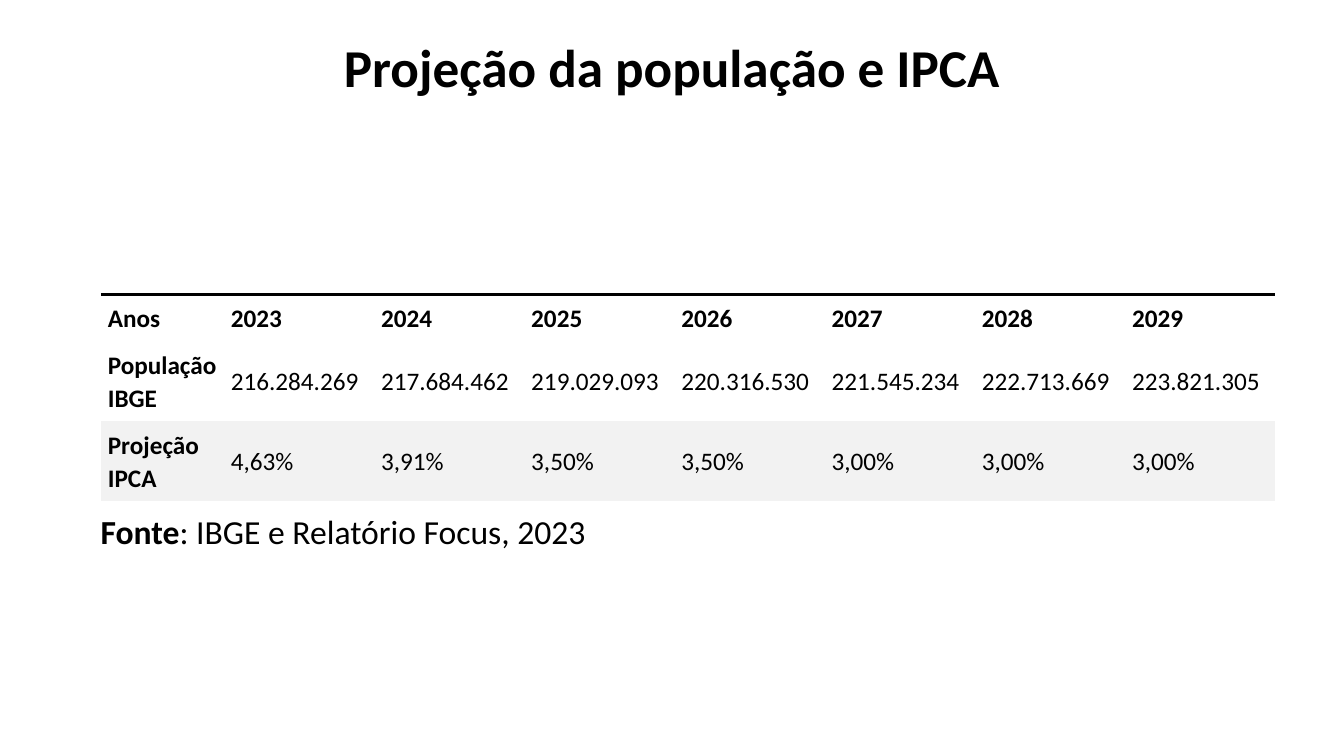
from pptx import Presentation
from pptx.dml.color import RGBColor
from pptx.enum.text import MSO_ANCHOR as Anchor, MSO_AUTO_SIZE as AutoSize, PP_ALIGN as Align
from pptx.oxml import parse_xml
from pptx.oxml.ns import nsdecls, qn
from pptx.util import Inches, Pt

BLACK = RGBColor(0, 0, 0)
BAND = RGBColor(0xF2, 0xF2, 0xF2)
FONT = "Calibri"
PLAIN_STYLE = "{2D5ABB26-0587-4C30-8999-92F81FD0307C}"
SLIDE_W, SLIDE_H = 13.33, 7.5

PROJECTIONS = [
    ["Anos", *(str(year) for year in range(2023, 2030))],
    ["População IBGE", "216.284.269", "217.684.462", "219.029.093", "220.316.530",
     "221.545.234", "222.713.669", "223.821.305"],
    ["Projeção IPCA", "4,63%", "3,91%", "3,50%", "3,50%", "3,00%", "3,00%", "3,00%"],
]
LABEL_W, YEAR_W = 1.22, 1.49
ROW_HEIGHTS = [0.4, 0.64, 0.64]


def write(paragraph, text, size=18, bold=False, align=Align.LEFT, spacing=1, after=0):
    """Add a formatted run to a paragraph."""
    paragraph.alignment = align
    paragraph.line_spacing = spacing
    paragraph.space_before, paragraph.space_after = Pt(0), Pt(after)
    run = paragraph.add_run()
    run.text = text
    run.font.name, run.font.size, run.font.bold = FONT, Pt(size), bold
    run.font.color.rgb = BLACK


def add_heading(slide, left, top, width, height):
    """Place the slide title in the given box."""
    heading = slide.shapes.title
    heading.left, heading.top = Inches(left), Inches(top)
    heading.width, heading.height = Inches(width), Inches(height)
    frame = heading.text_frame
    frame.word_wrap, frame.auto_size = True, AutoSize.NONE
    frame.vertical_anchor = Anchor.MIDDLE
    write(frame.paragraphs[0], "Projeção da população e IPCA", size=38, bold=True,
          align=Align.CENTER, spacing=0.9, after=6)


def rule_above(cell):
    """Draw the black rule along the top of a cell."""
    properties = cell._tc.get_or_add_tcPr()
    properties.insert(0, parse_xml(
        f'<a:lnT {nsdecls("a")} w="{Pt(2.25)}"><a:solidFill>'
        f'<a:srgbClr val="{BLACK}"/></a:solidFill></a:lnT>'))


def add_projections(slide, left, top):
    """Place the table of population and inflation by year."""
    columns = len(PROJECTIONS[0])
    width = LABEL_W + YEAR_W * (columns - 1)
    holder = slide.shapes.add_table(len(PROJECTIONS), columns, Inches(left), Inches(top),
                                    Inches(width), Inches(sum(ROW_HEIGHTS)))
    table = holder.table
    table.first_row = table.horz_banding = False
    next(holder.element.iter(qn("a:tableStyleId"))).text = PLAIN_STYLE
    for index, column in enumerate(table.columns):
        column.width = Inches(YEAR_W if index else LABEL_W)
    for r, (values, height) in enumerate(zip(PROJECTIONS, ROW_HEIGHTS)):
        table.rows[r].height = Inches(height)
        for c, value in enumerate(values):
            cell = table.cell(r, c)
            cell.vertical_anchor = Anchor.MIDDLE
            cell.margin_left = cell.margin_right = Inches(0.07)
            cell.margin_top = cell.margin_bottom = Inches(0.07)
            if r == 2:
                cell.fill.solid()
                cell.fill.fore_color.rgb = BAND
            else:
                cell.fill.background()
            if r == 0:
                rule_above(cell)
            write(cell.text_frame.paragraphs[0], value, bold=r == 0 or c == 0,
                  align=Align.JUSTIFY, spacing=1.07, after=8)


def add_credit(slide, left, top, width, height):
    """Place the line that names the data sources."""
    credit = slide.shapes.add_textbox(Inches(left), Inches(top), Inches(width), Inches(height))
    frame = credit.text_frame
    frame.word_wrap, frame.auto_size = True, AutoSize.SHAPE_TO_FIT_TEXT
    line = frame.paragraphs[0]
    write(line, "Fonte", size=24, bold=True)
    write(line, ": IBGE e Relatório Focus, 2023", size=24)


def main():
    """Build and save the slide."""
    deck = Presentation()
    deck.slide_width, deck.slide_height = Inches(SLIDE_W), Inches(SLIDE_H)
    slide = deck.slides.add_slide(deck.slide_layouts[5])
    add_projections(slide, 1, 2.92)
    add_credit(slide, 0.9, 5.02, SLIDE_W / 2, 0.5)
    add_heading(slide, 0, -0.13, SLIDE_W, SLIDE_H * 0.22)
    deck.save("out.pptx")


if __name__ == "__main__":
    main()
